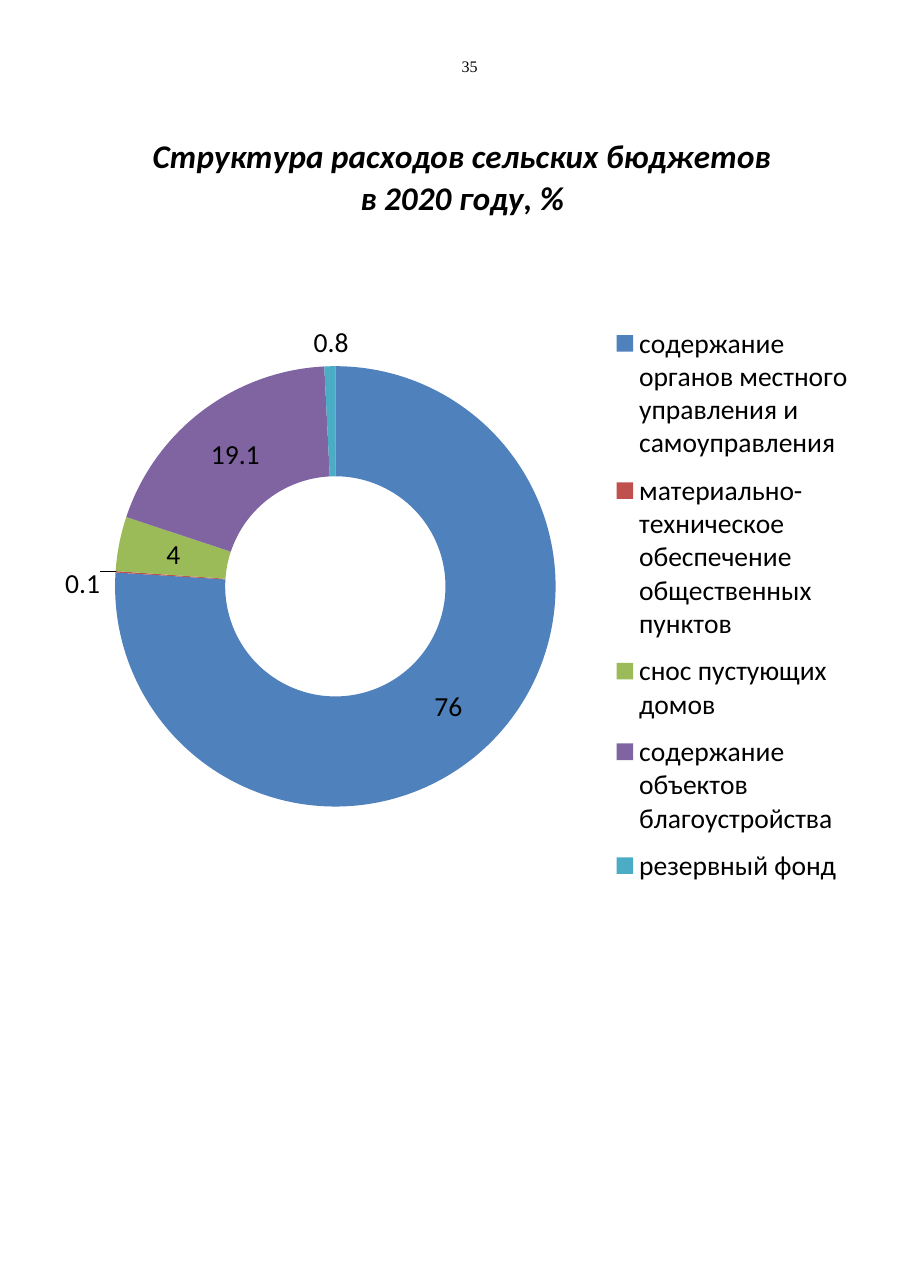
import pptx
import pptx.chart.data
import pptx.dml.color
import pptx.enum.chart
import pptx.oxml
import pptx.oxml.ns
import pptx.util
from pptx.util import Cm

COLORS = {
    "text": "000000",
    "administration": "4F81BD",
    "supplies": "C0504D",
    "demolition": "9BBB59",
    "improvement": "8064A2",
    "reserve": "4BACC6",
}
EXPENSES = [
    ("содержание органов местного управления и самоуправления", 76, "administration"),
    ("материально-техническое обеспечение общественных пунктов", 0.1, "supplies"),
    ("снос пустующих домов", 4, "demolition"),
    ("содержание объектов благоустройства", 19.1, "improvement"),
    ("резервный фонд", 0.8, "reserve"),
]
LABEL_OFFSETS = {1: (-0.11, 0.01), 4: (0, -0.1)}


def set_font(font, name, size, bold=False, italic=False):
    font.name = name
    font.size = pptx.util.Pt(size)
    font.bold = bold
    font.italic = italic
    font.color.rgb = pptx.dml.color.RGBColor.from_string(COLORS["text"])


def set_layout(parent, index, **values):
    """Give a chart part a manual layout, in fractions of the chart."""
    for old in parent.findall(pptx.oxml.ns.qn("c:layout")):
        parent.remove(old)
    items = "".join(f'<c:{k} val="{v}"/>' for k, v in values.items())
    parent.insert(index, pptx.oxml.parse_xml(
        f'<c:layout {pptx.oxml.ns.nsdecls("c")}><c:manualLayout>{items}'
        '</c:manualLayout></c:layout>'))


prs = pptx.Presentation()
prs.slide_width, prs.slide_height = Cm(21), Cm(29.7)
s = prs.slides.add_slide(prs.slide_layouts[6])

# Page number
tf = s.shapes.add_textbox(Cm(10.64), Cm(1.3), Cm(0.48), Cm(0.38)).text_frame
tf.margin_left = tf.margin_right = tf.margin_top = tf.margin_bottom = 0
tf.word_wrap = False
p = tf.paragraphs[0]
p.text = "35"
set_font(p.font, "Times New Roman", 10.5)

# Doughnut chart
data = pptx.chart.data.CategoryChartData()
data.categories = [name for name, _, _ in EXPENSES]
data.add_series("Расходы", [value for _, value, _ in EXPENSES])
chart = s.shapes.add_chart(
    pptx.enum.chart.XL_CHART_TYPE.DOUGHNUT,
    Cm(1.42), Cm(2.84), Cm(18.4), Cm(18.2), data).chart
set_font(chart.font, "Calibri", 18)

chart.has_title = True
title = chart.chart_title
title.include_in_layout = False
title.text_frame.text = "Структура расходов сельских бюджетов\nв 2020 году, %"
for p in title.text_frame.paragraphs:
    set_font(p.font, "Calibri", 21.6, bold=True, italic=True)

chart.has_legend = True
legend = chart.legend
legend.position = pptx.enum.chart.XL_LEGEND_POSITION.RIGHT
legend.include_in_layout = False
set_font(legend.font, "Calibri", 18)

plot = chart.plots[0]
plot.vary_by_categories = True
series = plot.series[0]
for i, (_, _, color) in enumerate(EXPENSES):
    fill = series.points[i].format.fill
    fill.solid()
    fill.fore_color.rgb = pptx.dml.color.RGBColor.from_string(COLORS[color])

labels = series.data_labels
labels.show_value = True
labels.show_percentage = False
labels.show_leader_lines = False
set_font(labels.font, "Calibri", 18)
for i in LABEL_OFFSETS:
    set_font(series.points[i].data_label.font, "Calibri", 18)

# Manual positions inside the chart
root = chart.element if hasattr(chart, "element") else chart._chartSpace
set_layout(root.find(".//" + pptx.oxml.ns.qn("c:title")), 1,
           xMode="edge", yMode="edge", x=0.11, y=0.01)
set_layout(root.find(".//" + pptx.oxml.ns.qn("c:plotArea")), 0,
           layoutTarget="inner", xMode="edge", yMode="edge",
           x=0.067, y=0.308, w=0.552, h=0.558)
set_layout(root.find(".//" + pptx.oxml.ns.qn("c:legend")), 1,
           xMode="edge", yMode="edge", x=0.68, y=0.24, w=0.32, h=0.74)
for label, (x, y) in zip(root.iter(pptx.oxml.ns.qn("c:dLbl")), LABEL_OFFSETS.values()):
    set_layout(label, 1, x=x, y=y)

prs.save("out.pptx")
